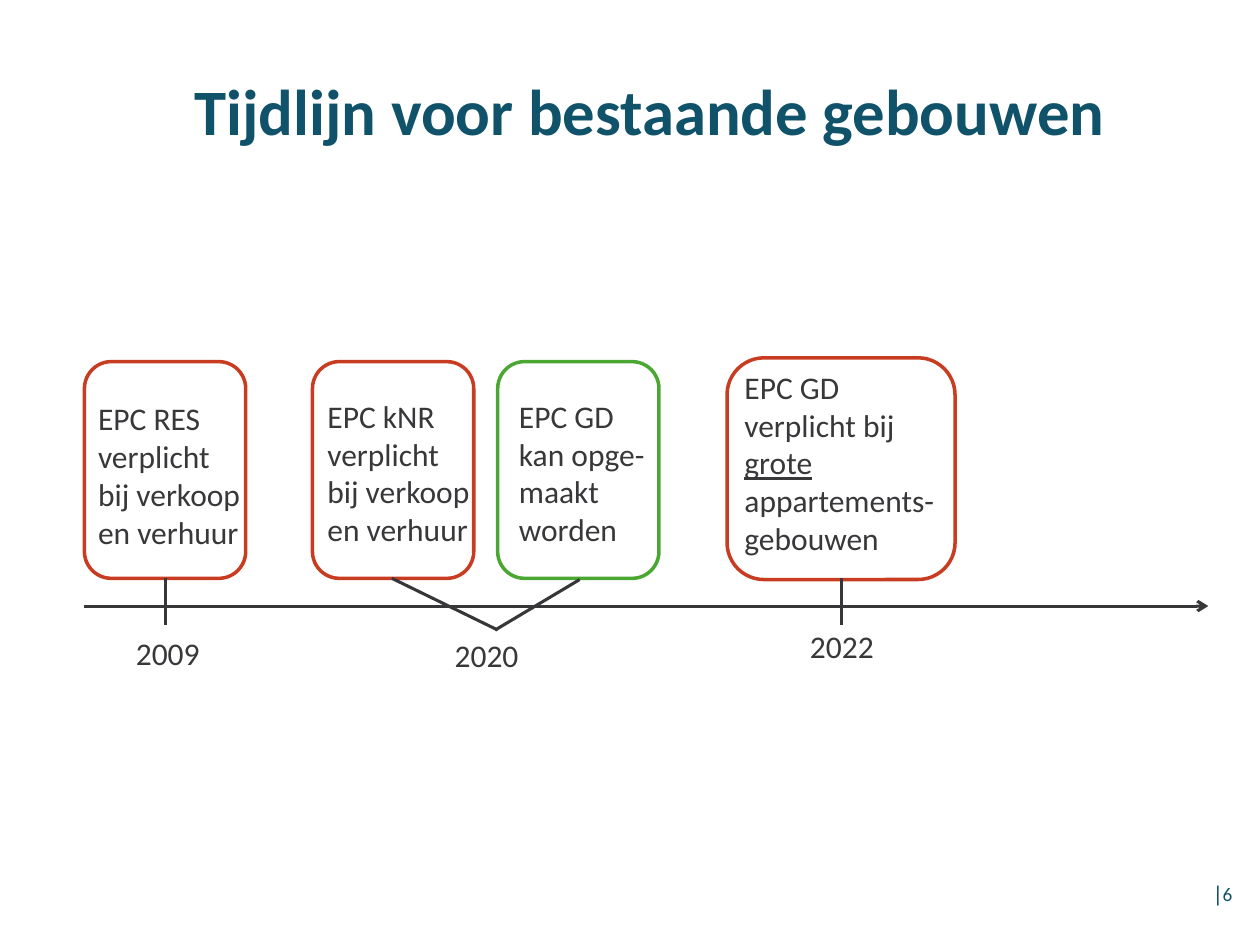
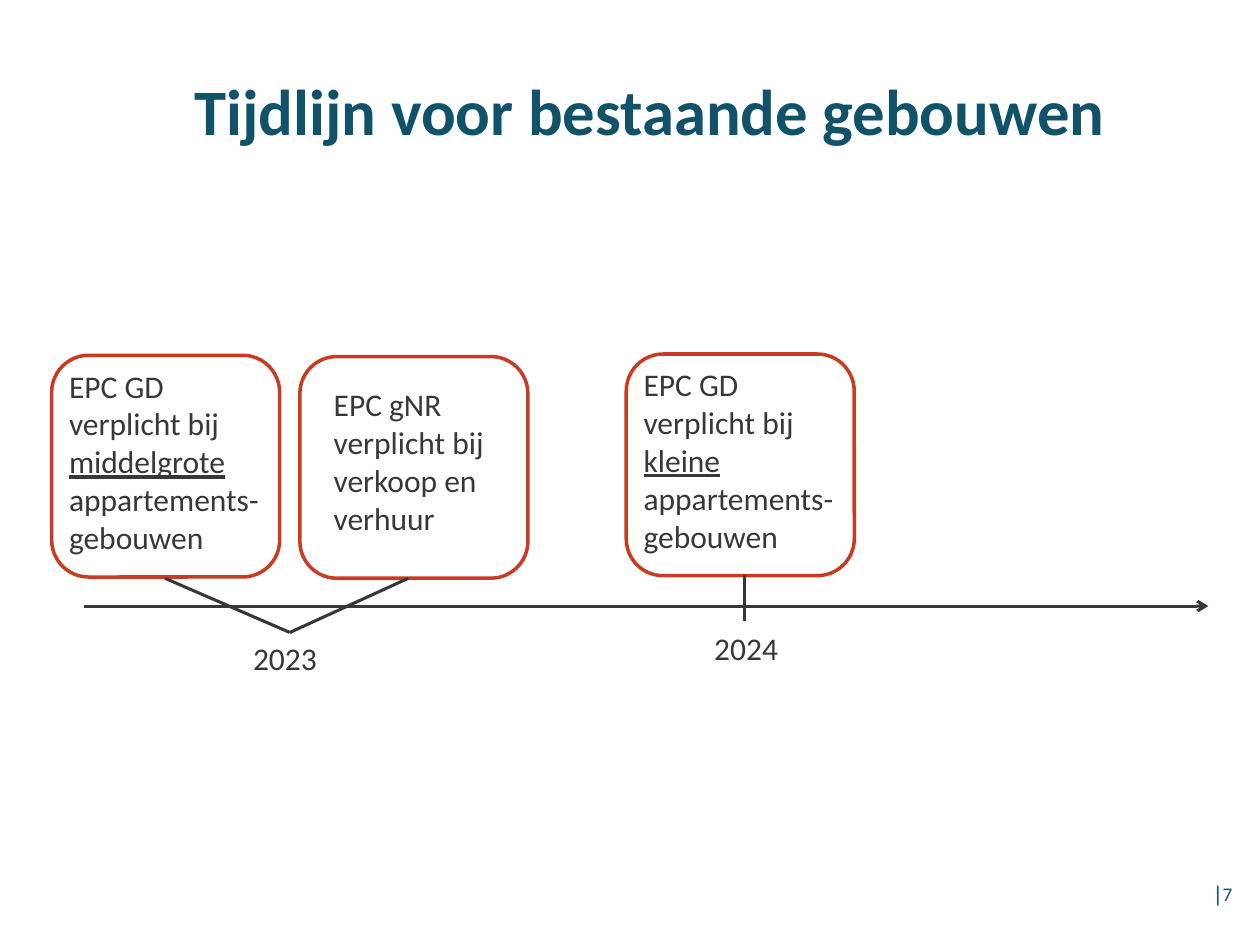
from dataclasses import dataclass

from lxml import etree
from pptx import Presentation
from pptx.dml.color import RGBColor
from pptx.enum import shapes, text
from pptx.oxml import ns
from pptx.util import Inches, Pt

NAVY = RGBColor(0x10, 0x52, 0x69)
INK = RGBColor(0x38, 0x37, 0x3A)
LINE = RGBColor(0x37, 0x36, 0x39)
RED = RGBColor(0xC8, 0x3C, 0x22)
GREEN = RGBColor(0x4A, 0xA8, 0x32)
WHITE = RGBColor(0xFF, 0xFF, 0xFF)
FONT = "Calibri"
TITLE = "Tijdlijn voor bestaande gebouwen"
LEFT, RIGHT = text.PP_ALIGN.LEFT, text.PP_ALIGN.RIGHT
SMALL, LARGE = (1.28, 1.72), (1.81, 1.76)
AXIS = 4.81


@dataclass(frozen=True)
class Run:
    words: str
    size: float = 18
    color: RGBColor = INK
    bold: bool = False
    under: bool = False


@dataclass(frozen=True)
class Card:
    left: float
    top: float
    size: tuple[float, float]
    note: tuple[float, float, float, float]
    lines: list[list[Run]]
    edge: RGBColor = RED


@dataclass(frozen=True)
class Year:
    label: str
    left: float
    top: float


@dataclass(frozen=True)
class Stroke:
    x1: float
    y1: float
    x2: float
    y2: float


@dataclass(frozen=True)
class Page:
    number: int
    cards: list[Card]
    years: list[Year]
    strokes: list[Stroke]


def rows(*words: str) -> list[list[Run]]:
    return [[Run(word)] for word in words]


def duty(scale: str) -> list[list[Run]]:
    return [[Run("EPC GD")],
            [Run("verplicht bij "), Run(scale, under=True), Run(" appartements-gebouwen")]]


def tick(x: float, top: float) -> Stroke:
    return Stroke(x, top, x, top + 0.37)


def write(slide, box: tuple[float, float, float, float], lines: list[list[Run]],
          align=LEFT, pitch: float | None = None) -> None:
    frame = slide.shapes.add_textbox(*map(Inches, box)).text_frame
    frame.word_wrap = True
    for index, line in enumerate(lines):
        para = frame.add_paragraph() if index else frame.paragraphs[0]
        para.alignment = align
        if pitch:
            para.line_spacing = Pt(pitch)
        for item in line:
            run = para.add_run()
            run.text = item.words
            font = run.font
            font.name, font.size, font.bold = FONT, Pt(item.size), item.bold
            font.underline = item.under
            font.color.rgb = item.color


def draw(slide, stroke: Stroke, arrow: bool = False) -> None:
    ends = map(Inches, (stroke.x1, stroke.y1, stroke.x2, stroke.y2))
    link = slide.shapes.add_connector(shapes.MSO_CONNECTOR.STRAIGHT, *ends)
    link.line.color.rgb = LINE
    link.line.width = Pt(1.75)
    if arrow:
        etree.SubElement(link.line._get_or_add_ln(), ns.qn("a:tailEnd"), type="arrow")
    etree.SubElement(link._element.spPr, ns.qn("a:effectLst"))


def place(slide, card: Card) -> None:
    box = map(Inches, (card.left, card.top, *card.size))
    shape = slide.shapes.add_shape(shapes.MSO_SHAPE.ROUNDED_RECTANGLE, *box)
    shape.shadow.inherit = False
    shape.fill.solid()
    shape.fill.fore_color.rgb = WHITE
    shape.line.color.rgb = card.edge
    shape.line.width = Pt(2)
    write(slide, card.note, card.lines)


def build(deck, page: Page) -> None:
    slide = deck.slides.add_slide(deck.slide_layouts[6])
    write(slide, (0.59, 0.6, 9.13, 1.18), [[Run(TITLE, 37, NAVY, True)]],
          text.PP_ALIGN.CENTER, 38)
    write(slide, (7.55, 6.95, 2.33, 0.4),
          [[Run("│", 11, NAVY, True), Run(str(page.number), 11, NAVY)]], RIGHT)
    draw(slide, Stroke(0.67, AXIS, 9.59, AXIS), arrow=True)
    for card in page.cards:
        place(slide, card)
    for year in page.years:
        write(slide, (year.left, year.top, 1.28, 0.4), rows(year.label))
    for stroke in page.strokes:
        draw(slide, stroke)


PAGES = [
    Page(6,
         [Card(0.67, 2.87, SMALL, (0.68, 3.12, 2.12, 1.31),
               rows("EPC RES", "verplicht", "bij verkoop", "en verhuur")),
          Card(2.48, 2.87, SMALL, (2.5, 3.1, 2.12, 1.31),
               rows("EPC kNR", "verplicht", "bij verkoop", "en verhuur")),
          Card(3.95, 2.87, SMALL, (4.02, 3.1, 2.12, 1.31),
               rows("EPC GD", "kan opge-", "maakt", "worden"), GREEN),
          Card(5.77, 2.84, LARGE, (5.81, 2.87, 1.81, 1.62), duty("grote"))],
         [Year("2009", 0.98, 4.98), Year("2020", 3.51, 5), Year("2022", 6.33, 4.93)],
         [tick(1.31, 4.59), tick(6.68, 4.59),
          Stroke(3.11, 4.59, 3.95, 5), Stroke(4.6, 4.6, 3.93, 5)]),
    Page(7,
         [Card(0.41, 2.82, LARGE, (0.45, 2.86, 1.94, 1.62), duty("middelgrote")),
          Card(2.38, 2.83, LARGE, (2.55, 3.01, 1.63, 1.31),
               rows("EPC gNR verplicht bij verkoop en verhuur")),
          Card(4.97, 2.81, LARGE, (5.01, 2.85, 1.94, 1.62), duty("kleine"))],
         [Year("2023", 1.91, 5.02), Year("2024", 5.57, 4.94)],
         [Stroke(1.31, 4.59, 2.3, 5.02), Stroke(3.24, 4.59, 2.3, 5.02),
          tick(5.91, 4.56)]),
]


def main() -> None:
    deck = Presentation()
    deck.slide_width, deck.slide_height = Inches(10), Inches(7.5)
    for page in PAGES:
        build(deck, page)
    deck.save("out.pptx")


if __name__ == "__main__":
    main()
